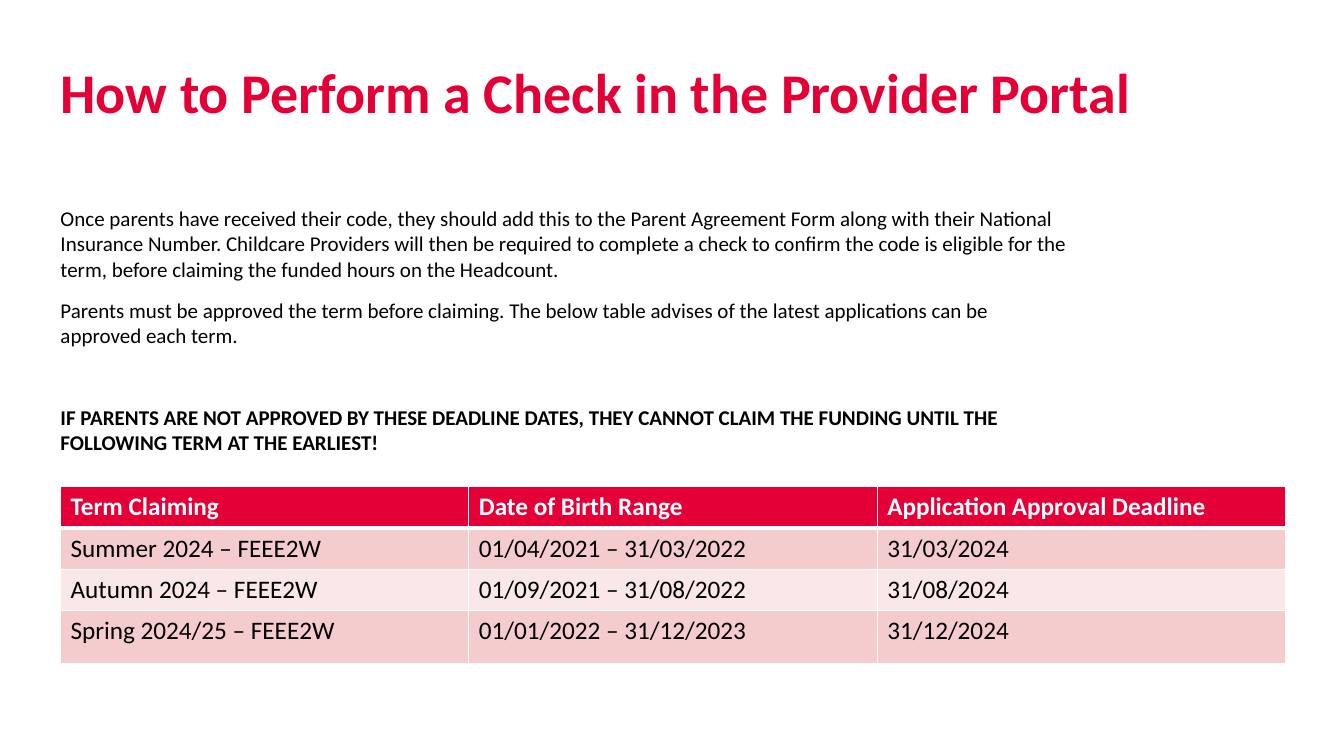
"""Build the slide on checking eligibility codes in the provider portal."""
import pptx
import pptx.dml.color
import pptx.enum.text
import pptx.oxml
import pptx.oxml.ns
import pptx.util

RED = pptx.dml.color.RGBColor(0xE4, 0x00, 0x37)
BLACK = pptx.dml.color.RGBColor(0x00, 0x00, 0x00)
WHITE = pptx.dml.color.RGBColor(0xFF, 0xFF, 0xFF)
BAND_DARK = pptx.dml.color.RGBColor(0xF5, 0xCC, 0xCE)
BAND_LIGHT = pptx.dml.color.RGBColor(0xFA, 0xE7, 0xE8)
FONT = "Calibri"

TITLE = "How to Perform a Check in the Provider Portal"
BODY = [
    {"text": "Once parents have received their code, they should add this to the Parent "
             "Agreement Form along with their National Insurance Number. Childcare Providers "
             "will then be required to complete a check to confirm the code is eligible for "
             "the term, before claiming the funded hours on the Headcount.",
     "after": 11.3},
    {"text": "Parents must be approved the term before claiming. The below table advises of "
             "the latest applications can be approved each term.",
     "after": 40.8},
    {"text": "IF PARENTS ARE NOT APPROVED BY THESE DEADLINE DATES, THEY CANNOT CLAIM THE "
             "FUNDING UNTIL THE FOLLOWING TERM AT THE EARLIEST!",
     "bold": True},
]
DEADLINES = [
    ("Term Claiming", "Date of Birth Range", "Application Approval Deadline"),
    ("Summer 2024 – FEEE2W", "01/04/2021 – 31/03/2022", "31/03/2024"),
    ("Autumn 2024 – FEEE2W", "01/09/2021 – 31/08/2022", "31/08/2024"),
    ("Spring 2024/25 – FEEE2W", "01/01/2022 – 31/12/2023", "31/12/2024"),
]

SLIDE_SIZE = (13.33, 7.5)
MARGIN = 0.6
COLUMN_WIDTH = 4.05
ROW_HEIGHTS = (0.41, 0.41, 0.41, 0.52)


def inches(*lengths):
    return [pptx.util.Inches(length) for length in lengths]


def write(para, text, size=15, color=BLACK, bold=False, after=0):
    span = para.add_run()
    span.text = text
    span.font.name = FONT
    span.font.size = pptx.util.Pt(size)
    span.font.color.rgb = color
    span.font.bold = bold
    para.space_after = pptx.util.Pt(after)


def add_text_frame(page, top, width, height):
    frame = page.shapes.add_textbox(*inches(MARGIN, top, width, height)).text_frame
    frame.word_wrap = True
    frame.vertical_anchor = pptx.enum.text.MSO_ANCHOR.TOP
    frame.margin_left = frame.margin_right = frame.margin_top = frame.margin_bottom = 0
    return frame


def set_borders(cell, widths):
    properties = cell._tc.get_or_add_tcPr()
    for side, width in widths.items():
        properties.append(pptx.oxml.parse_xml(
            f'<a:ln{side} {pptx.oxml.ns.nsdecls("a")} w="{pptx.util.Pt(width)}">'
            f'<a:solidFill><a:srgbClr val="{WHITE}"/></a:solidFill></a:ln{side}>'))


def add_deadline_table(page, top):
    columns = len(DEADLINES[0])
    size = (columns * COLUMN_WIDTH, sum(ROW_HEIGHTS))
    table = page.shapes.add_table(len(DEADLINES), columns, *inches(MARGIN, top, *size)).table
    for column in table.columns:
        column.width = pptx.util.Inches(COLUMN_WIDTH)
    for row, (height, values) in enumerate(zip(ROW_HEIGHTS, DEADLINES)):
        table.rows[row].height = pptx.util.Inches(height)
        header = row == 0
        fill = RED if header else (BAND_LIGHT, BAND_DARK)[row % 2]
        for column, value in enumerate(values):
            cell = table.cell(row, column)
            set_borders(cell, {"L": 1, "R": 1, "T": 3 if row == 1 else 1, "B": 3 if header else 1})
            cell.fill.solid()
            cell.fill.fore_color.rgb = fill
            write(cell.text_frame.paragraphs[0], value, size=18,
                  color=WHITE if header else BLACK, bold=header)


def main():
    deck = pptx.Presentation()
    deck.slide_width, deck.slide_height = inches(*SLIDE_SIZE)
    page = deck.slides.add_slide(deck.slide_layouts[6])

    body = add_text_frame(page, 2.04, 10.02, 2.06)
    for index, block in enumerate(BODY):
        para = body.add_paragraph() if index else body.paragraphs[0]
        write(para, **block)

    title = add_text_frame(page, 0.57, 11.2, 1.16)
    write(title.paragraphs[0], TITLE, size=40, color=RED, bold=True)

    add_deadline_table(page, 4.83)
    deck.save("out.pptx")


if __name__ == "__main__":
    main()
